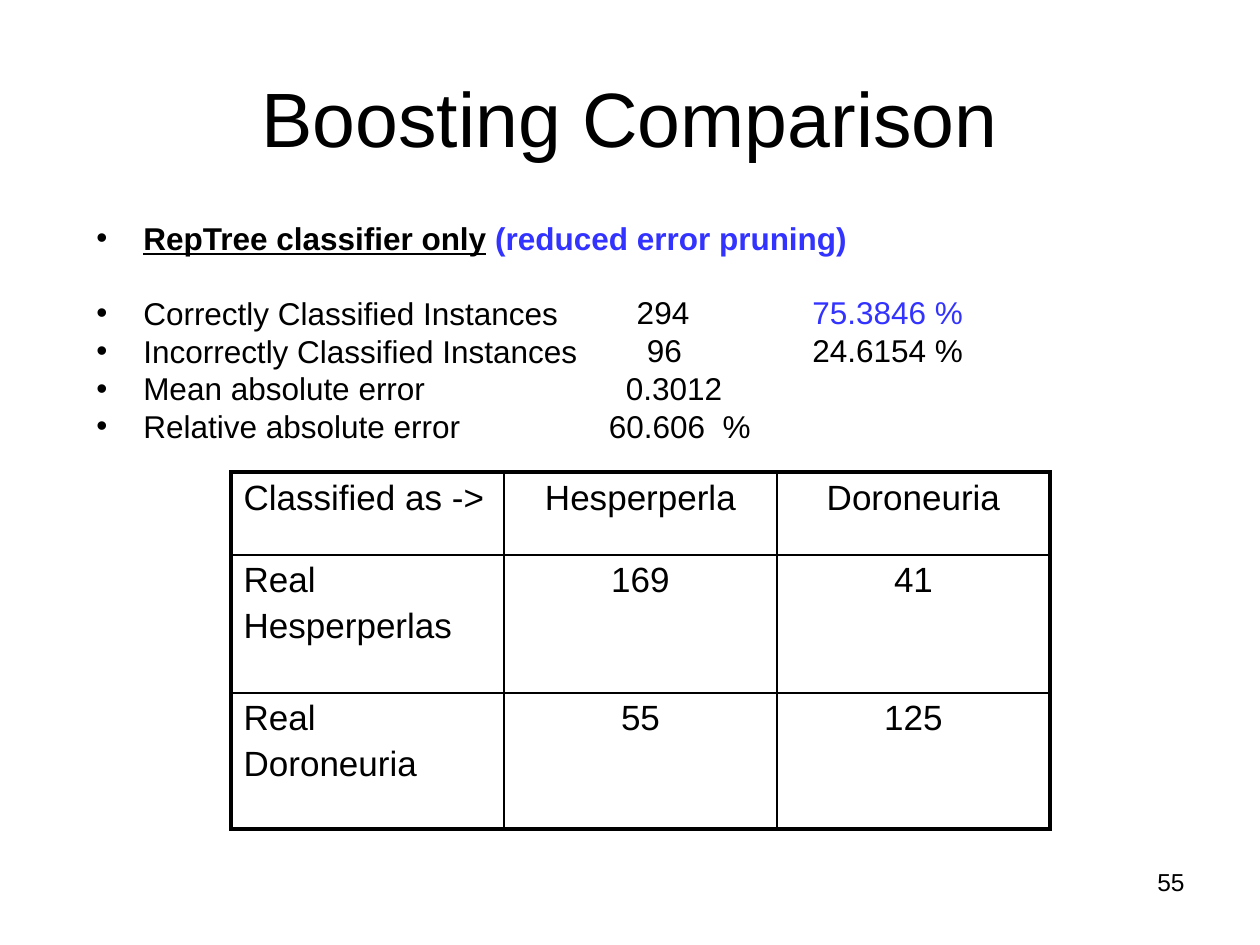
from lxml import etree
from pptx import Presentation
from pptx import util as u
from pptx.dml.color import RGBColor
from pptx.enum import text
from pptx.oxml.ns import qn

BLACK = RGBColor(0x00, 0x00, 0x00)
BLUE = RGBColor(0x33, 0x33, 0xFF)
FONT = "Arial"
EMU_PER_PX = 914400 / 126
ROW_GAP = 4.4
BLANK_LINE = 21
LIST_TOP = 220
ROW_PITCH = 37
STATISTICS = [
    ("Correctly Classified Instances", "294", 637),
    ("Incorrectly Classified Instances", "96", 647),
    ("Mean absolute error", "0.3012", 626),
    ("Relative absolute error", "60.606  %", 609),
]
PERCENTAGES = [("75.3846 %", BLUE), ("24.6154 %", BLACK)]
CONFUSION = [
    [["Classified as ->"], ["Hesperperla"], ["Doroneuria"]],
    [["Real", "Hesperperlas"], ["169"], ["41"]],
    [["Real", "Doroneuria"], ["55"], ["125"]],
]
ROW_HEIGHTS = [83, 138, 136]
COLUMN_WIDTH = 273


def px(n):
    return u.Emu(round(n * EMU_PER_PX))


def add_run(p, content, size, color=BLACK, bold=False, underline=False):
    r = p.add_run()
    r.text = content
    f = r.font
    f.name, f.size, f.bold, f.underline = FONT, u.Pt(size), bold, underline
    f.color.rgb = color


def add_text_box(s, left, top, width, height):
    tf = s.shapes.add_textbox(px(left), px(top), px(width), px(height)).text_frame
    tf.word_wrap = True
    return tf


def next_paragraph(tf):
    p = tf.paragraphs[0]
    return tf.add_paragraph() if p.runs else p


def add_list_row(tf, before=ROW_GAP, indent=0, bullet=False):
    p = next_paragraph(tf)
    p.line_spacing = 0.8
    p.space_before = u.Pt(before)
    pPr = p._p.get_or_add_pPr()
    pPr.set("marL", str(px(indent)))
    if bullet:
        pPr.set("indent", str(px(-indent)))
        etree.SubElement(pPr, qn("a:buFont")).set("typeface", FONT)
        etree.SubElement(pPr, qn("a:buChar")).set("char", "•")
    return p


def add_title(s, content):
    sp = s.shapes.title
    sp.left, sp.top, sp.width, sp.height = px(63), px(38), px(1134), px(158)
    tf = sp.text_frame
    tf.vertical_anchor = text.MSO_ANCHOR.MIDDLE
    p = tf.paragraphs[0]
    p.alignment = text.PP_ALIGN.CENTER
    add_run(p, content, 44)


def add_statistics(s):
    labels = add_text_box(s, 84, LIST_TOP, 955, 242)
    p = add_list_row(labels, indent=47, bullet=True)
    add_run(p, "RepTree classifier only", 18, bold=True, underline=True)
    add_run(p, " ", 18, bold=True)
    add_run(p, "(reduced error pruning)", 18, BLUE, bold=True)

    values_left, inset = 590, 12.6
    values_top = LIST_TOP + 2 * ROW_PITCH
    values = add_text_box(s, values_left, values_top, 200, 4 * ROW_PITCH)
    for i, (label, value, left) in enumerate(STATISTICS):
        before = ROW_GAP if i else ROW_GAP + BLANK_LINE
        add_run(add_list_row(labels, before, 47, True), label, 18)
        indent = left - values_left - inset
        add_run(add_list_row(values, indent=indent), value, 18)

    percentages = add_text_box(s, 800, values_top, 200, 2 * ROW_PITCH)
    for value, color in PERCENTAGES:
        add_run(add_list_row(percentages), value, 18, color)


def set_borders(cell, widths):
    tcPr = cell._tc.get_or_add_tcPr()
    for i, (side, width) in enumerate(widths.items()):
        ln = etree.Element(qn("a:" + side), w=str(u.Pt(width)))
        fill = etree.SubElement(ln, qn("a:solidFill"))
        etree.SubElement(fill, qn("a:srgbClr")).set("val", str(BLACK))
        tcPr.insert(i, ln)


def add_confusion_table(s):
    n = len(CONFUSION)
    table = s.shapes.add_table(n, n, px(231), px(472), px(n * COLUMN_WIDTH),
                               px(sum(ROW_HEIGHTS))).table
    table.first_row = table.horz_banding = False
    for column in table.columns:
        column.width = px(COLUMN_WIDTH)
    for i, height in enumerate(ROW_HEIGHTS):
        table.rows[i].height = px(height)
        for j, lines in enumerate(CONFUSION[i]):
            cell = table.cell(i, j)
            cell.fill.background()
            edges = {"lnL": j == 0, "lnR": j == n - 1,
                     "lnT": i == 0, "lnB": i == n - 1}
            set_borders(cell, {k: 2.25 if outer else 1 for k, outer in edges.items()})
            for line in lines:
                p = next_paragraph(cell.text_frame)
                p.alignment = text.PP_ALIGN.CENTER if j else text.PP_ALIGN.LEFT
                p.space_before = u.Pt(3.5)
                add_run(p, line, 20)


def add_slide_number(s, number):
    p = add_text_box(s, 903, 861, 294, 66).paragraphs[0]
    p.alignment = text.PP_ALIGN.RIGHT
    add_run(p, number, 14)


def main():
    prs = Presentation()
    prs.slide_width, prs.slide_height = px(1260), px(945)
    s = prs.slides.add_slide(prs.slide_layouts[5])
    add_title(s, "Boosting Comparison")
    add_statistics(s)
    add_confusion_table(s)
    add_slide_number(s, "55")
    prs.save("out.pptx")


if __name__ == "__main__":
    main()
